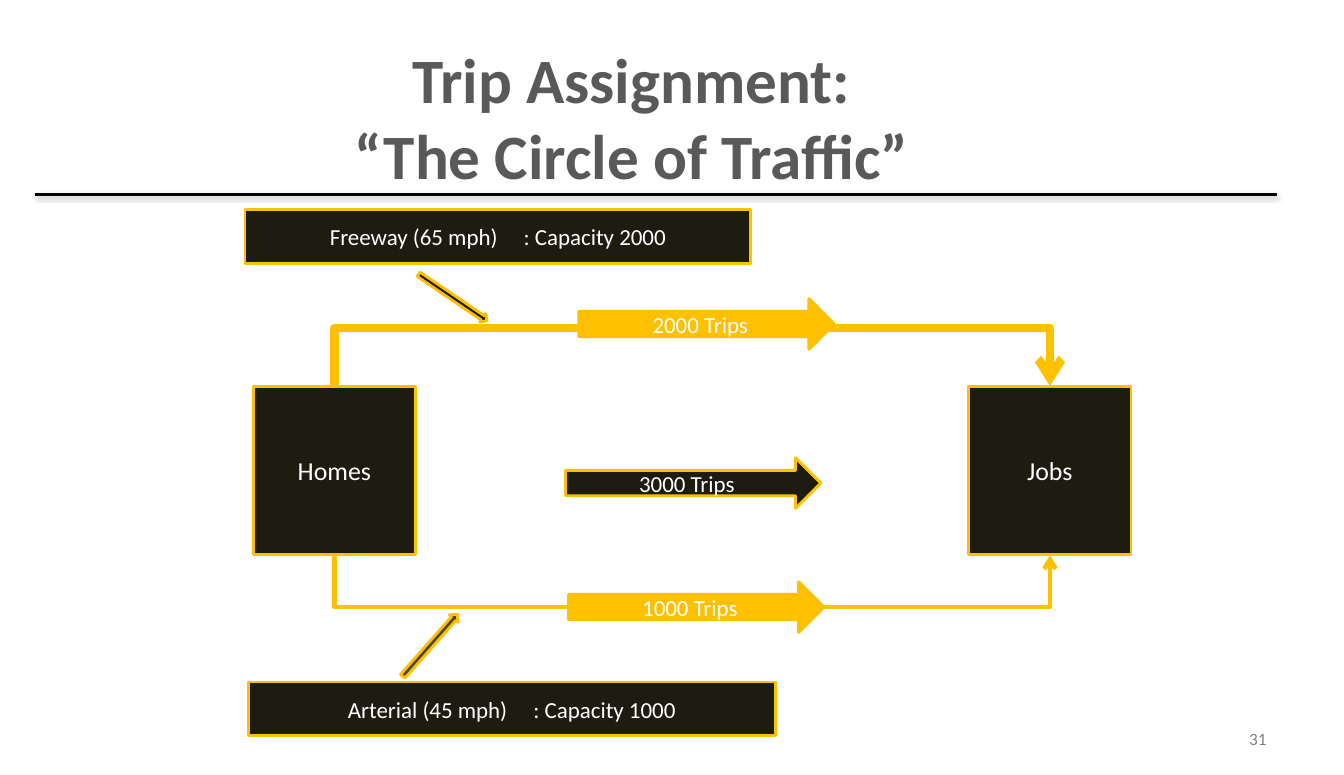
from lxml import etree
from pptx import Presentation
from pptx import util as u
from pptx.dml import color
from pptx.enum import shapes, text
from pptx.oxml import ns

PX = 9144
FONT = "Calibri"
DARK, GOLD, WHITE = "1E1C11", "FFC000", "FFFFFF"
RECT = shapes.MSO_SHAPE.RECTANGLE
ARROW = shapes.MSO_SHAPE.RIGHT_ARROW


def px(*lengths):
    return [u.Emu(length * PX) for length in lengths]


def rgb(value):
    return color.RGBColor.from_string(value)


def add_xml(parent, tag, **attributes):
    child = etree.SubElement(parent, ns.qn(tag))
    for key, value in attributes.items():
        child.set(key, str(value))
    return child


def style(paragraph, size, ink, align=text.PP_ALIGN.CENTER, bold=False):
    paragraph.alignment = align
    font = paragraph.font
    font.name, font.size, font.bold = FONT, u.Pt(size), bold
    font.color.rgb = rgb(ink)


def add_block(slide, kind, box, label="", size=16, fill=DARK, rotation=0):
    block = slide.shapes.add_shape(kind, *px(*box))
    block.shadow.inherit = False
    block.fill.solid()
    block.fill.fore_color.rgb = rgb(fill)
    block.line.color.rgb = rgb(GOLD)
    block.line.width = u.Pt(2)
    block.rotation = rotation
    if label:
        frame = block.text_frame
        frame.vertical_anchor = text.MSO_ANCHOR.MIDDLE
        frame.text = label
        style(frame.paragraphs[0], size, WHITE)
    return block


def add_header(slide, box):
    left, top, width, height = box
    title = slide.shapes.title
    title.left, title.top, title.width, title.height = px(left + 146, top, 862, 116)
    frame = title.text_frame
    frame.text = "Trip Assignment:\v“The Circle of Traffic”"
    frame.vertical_anchor = text.MSO_ANCHOR.TOP
    frame.auto_size = text.MSO_AUTO_SIZE.NONE
    style(frame.paragraphs[0], 44, "595959", bold=True)

    rule_y = top + height
    rule = slide.shapes.add_connector(
        shapes.MSO_CONNECTOR.STRAIGHT, *px(left, rule_y, left + width, rule_y))
    rule.line.color.rgb = rgb("000000")
    rule.line.width = u.Pt(2)
    effects = add_xml(rule._element.spPr, "a:effectLst")
    shadow = add_xml(effects, "a:outerShdw", blurRad=40000, dist=20000,
                     dir=5400000, rotWithShape=0)
    shade = add_xml(shadow, "a:srgbClr", val="000000")
    add_xml(shade, "a:alpha", val=38000)


def add_route(slide, homes, jobs, above, drop, weight):
    site = 0 if above else 2
    route = slide.shapes.add_connector(shapes.MSO_CONNECTOR.ELBOW, 0, 0, 0, 0)
    route.begin_connect(homes, site)
    route.end_connect(jobs, site)

    span = jobs.left - homes.left
    middle = homes.left + (homes.width + span) // 2
    edge = homes.top if above else homes.top + homes.height
    route.left, route.top = middle - PX // 2, edge - span // 2
    route.width, route.height = PX, span
    frame = route._element.spPr.find(ns.qn("a:xfrm"))
    frame.set("rot", "5400000" if above else "16200000")
    frame.set("flipH", "1")
    frame.set("flipV", "1" if above else "0")
    guides = route._element.spPr.find(ns.qn("a:prstGeom")).find(ns.qn("a:avLst"))
    add_xml(guides, "a:gd", name="adj1", fmla=f"val {drop * 100000}")

    route.line.color.rgb = rgb(GOLD)
    route.line.width = u.Pt(weight)
    add_xml(route.line._get_or_add_ln(), "a:tailEnd", type="arrow")
    add_xml(route._element.spPr, "a:effectLst")


def add_road_label(slide, box, road, capacity):
    label = add_block(slide, RECT, box, road)
    paragraph = label.text_frame.paragraphs[0]
    gap = paragraph.add_run()
    gap.text = " "
    gap.font._element.set("spc", "1450")
    paragraph.add_run().text = f": Capacity {capacity}"


def add_traffic_circle(slide, box):
    left, top, width, height = box
    place_y = top + 171
    homes, jobs = [
        add_block(slide, RECT, (x, place_y, 157, 163), name, 18)
        for name, x in (("Homes", left + 8), ("Jobs", left + width - 157))]
    add_block(slide, ARROW, (left + 310, top + 240, 247, 49), "3000 Trips")
    add_route(slide, homes, jobs, True, 58, 6)
    add_route(slide, homes, jobs, False, 52, 3)

    add_road_label(slide, (left, top, 489, 52), "Freeway (65 mph)", 2000)
    add_road_label(slide, (left + 3, top + height - 52, 510, 52),
                   "Arterial (45 mph)", 1000)
    add_block(slide, ARROW, (left + 139, top + 416, 80, 11),
              fill="4A452A", rotation=311.4)
    add_block(slide, ARROW, (left + 161, top + 80, 80, 10), rotation=34.2)
    for trips, x, y in (("2000 Trips", 323, 86), ("1000 Trips", 313, 360)):
        add_block(slide, ARROW, (left + x, top + y, 247, 49), trips, fill=GOLD)


def add_page_number(slide, box):
    frame = slide.shapes.add_textbox(*px(*box)).text_frame
    frame.word_wrap = True
    frame.vertical_anchor = text.MSO_ANCHOR.MIDDLE
    frame.text = "31"
    style(frame.paragraphs[0], 12, "808080", text.PP_ALIGN.RIGHT)


def main():
    deck = Presentation()
    deck.slide_width, deck.slide_height = px(1300, 750)
    slide = deck.slides.add_slide(deck.slide_layouts[5])
    slide.background.fill.solid()
    slide.background.fill.fore_color.rgb = rgb(WHITE)
    add_page_number(slide, (932, 695, 303, 40))
    add_header(slide, (34, 34, 1201, 154))
    add_traffic_circle(slide, (237, 203, 857, 509))
    deck.save("out.pptx")


if __name__ == "__main__":
    main()
